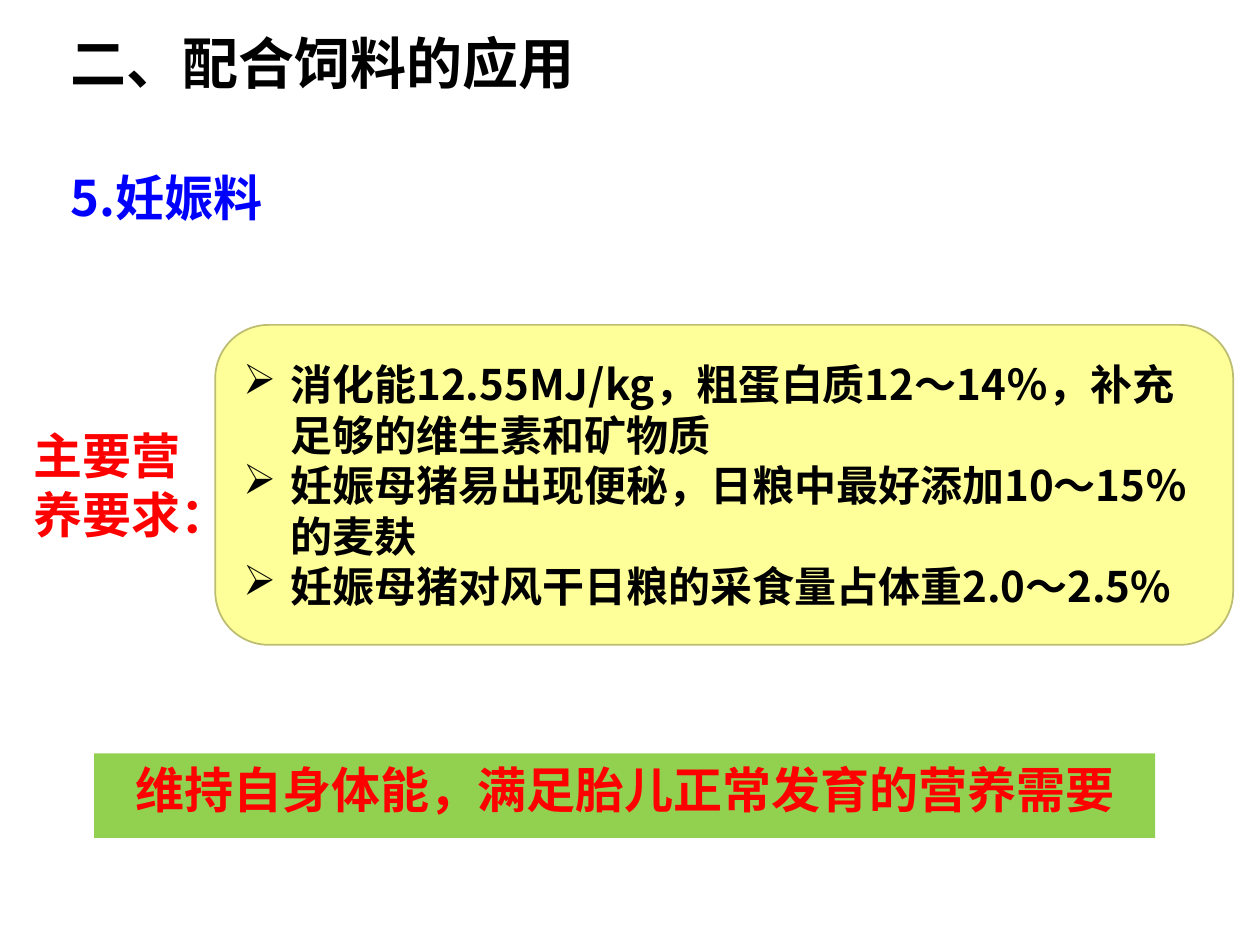
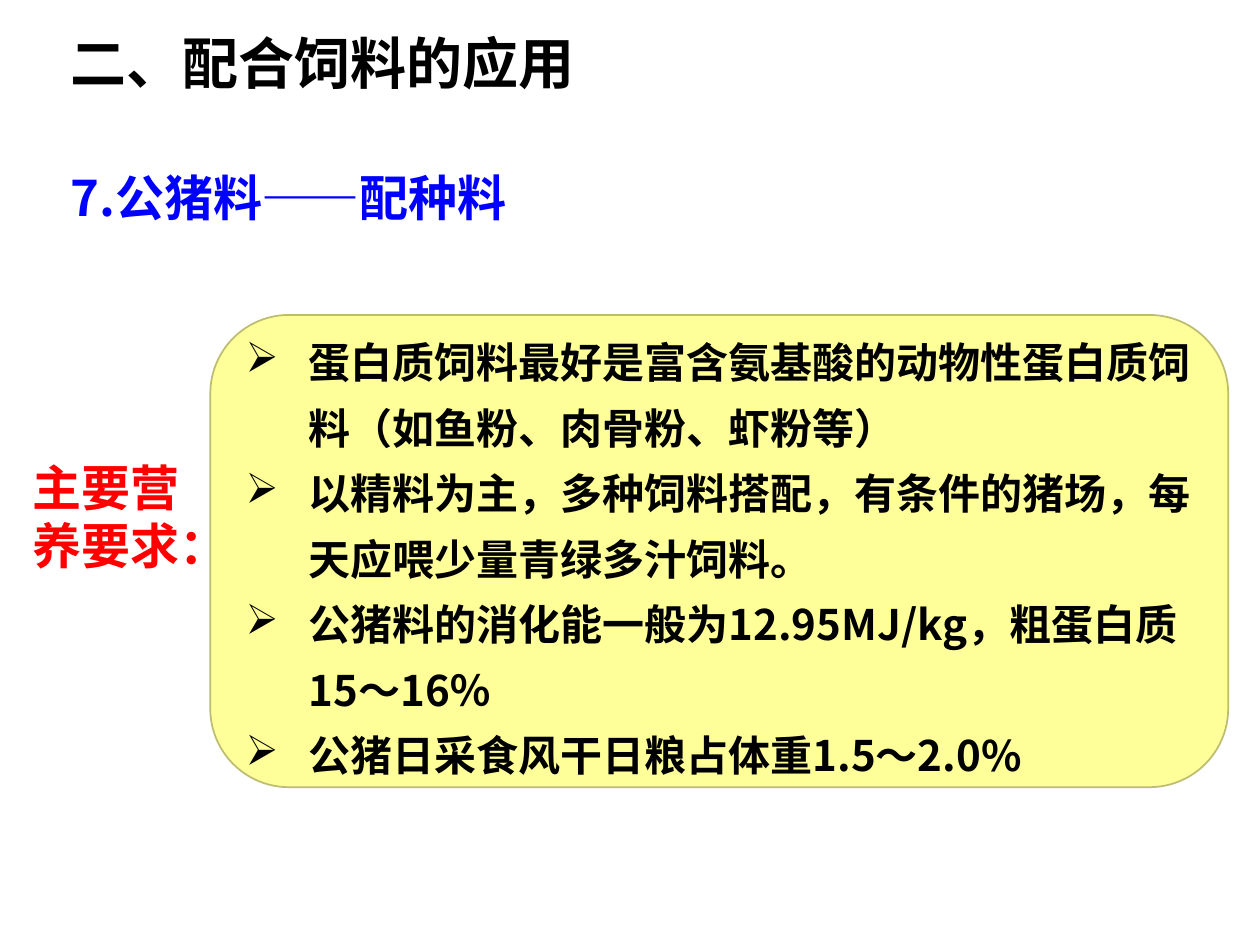
from dataclasses import dataclass
from typing import Optional

from lxml.etree import SubElement
from pptx import Presentation
from pptx.dml.color import RGBColor
from pptx.enum.shapes import MSO_SHAPE as Preset
from pptx.enum.text import MSO_ANCHOR as Anchor, MSO_AUTO_SIZE as AutoSize, PP_ALIGN as Align
from pptx.oxml.ns import qn
from pptx.slide import Slide
from pptx.util import Cm, Pt

FONT = "Noto Sans CJK SC"
BLACK, WHITE, BLUE, RED = "000000", "FFFFFF", "0000FF", "FF0000"
YELLOW, OLIVE, GREEN = "FFFF99", "BDBD71", "92D050"
MARGIN = 1.17
HEADING = "二、配合饲料的应用"
LABEL = ["主要营", "养要求："]


@dataclass(frozen=True)
class Area:
    """A rectangle in centimetres."""
    left: float
    top: float
    width: float
    height: float

    def lengths(self) -> list[Cm]:
        return [Cm(side) for side in (self.left, self.top, self.width, self.height)]


@dataclass(frozen=True)
class Style:
    """How the paragraphs of a box look."""
    size: int
    color: str
    align: Align = Align.LEFT
    anchor: Anchor = Anchor.TOP
    wrap: bool = True
    grow: bool = False
    bullet_indent: float = 0
    line_spacing: Optional[float] = None


@dataclass(frozen=True)
class FeedPage:
    """What differs from one feed page to the next."""
    title: str
    title_width: float
    label: Area
    panel: Area
    indent: float
    points: list[str]
    line_spacing: Optional[float] = None
    summary: str = ""


PAGES = [
    FeedPage(
        title="5.妊娠料",
        title_width=7.37,
        label=Area(0.43, 8.46, 3.81, 2.64),
        panel=Area(4.34, 6.55, 20.52, 6.45),
        indent=0.95,
        points=[
            "消化能12.55MJ/kg，粗蛋白质12～14％，补充足够的维生素和矿物质",
            "妊娠母猪易出现便秘，日粮中最好添加10～15％的麦麸",
            "妊娠母猪对风干日粮的采食量占体重2.0～2.5%",
        ],
        summary="维持自身体能，满足胎儿正常发育的营养需要",
    ),
    FeedPage(
        title="7.公猪料——配种料",
        title_width=10.49,
        label=Area(0.41, 9.09, 3.81, 2.64),
        panel=Area(4.24, 6.35, 20.52, 9.52),
        indent=1.27,
        points=[
            "蛋白质饲料最好是富含氨基酸的动物性蛋白质饲料（如鱼粉、肉骨粉、虾粉等）",
            "以精料为主，多种饲料搭配，有条件的猪场，每天应喂少量青绿多汁饲料。",
            "公猪料的消化能一般为12.95MJ/kg，粗蛋白质15～16％",
            "公猪日采食风干日粮占体重1.5～2.0%",
        ],
        line_spacing=1.3,
    ),
]


def rgb(color: str) -> RGBColor:
    """Turn a hex string into a colour."""
    return RGBColor.from_string(color)


def write(box, lines: list[str], style: Style) -> None:
    """Fill a box with one paragraph per line."""
    frame = box.text_frame
    frame.word_wrap = style.wrap
    frame.vertical_anchor = style.anchor
    frame.auto_size = AutoSize.SHAPE_TO_FIT_TEXT if style.grow else AutoSize.NONE
    for index, line in enumerate(lines):
        para = frame.add_paragraph() if index else frame.paragraphs[0]
        para.text = line
        para.alignment = style.align
        if style.line_spacing:
            para.line_spacing = style.line_spacing
        if style.bullet_indent:
            properties = para._p.get_or_add_pPr()
            indent = Cm(style.bullet_indent)
            properties.set("marL", str(indent))
            properties.set("indent", str(-indent))
            SubElement(properties, qn("a:buChar"), char="➢")
        font = para.font
        font.size, font.bold, font.name = Pt(style.size), True, FONT
        font.color.rgb = rgb(style.color)
        SubElement(font._element, qn("a:ea"), typeface=FONT)


def add_text(page: Slide, area: Area, lines: list[str], style: Style) -> None:
    """Add a plain text box."""
    write(page.shapes.add_textbox(*area.lengths()), lines, style)


def add_block(page: Slide, area: Area, lines: list[str], style: Style, fill: str,
              preset: Preset = Preset.RECTANGLE, line: str = "") -> None:
    """Add a filled shape with text."""
    box = page.shapes.add_shape(preset, *area.lengths())
    box.shadow.inherit = False
    box.fill.solid()
    box.fill.fore_color.rgb = rgb(fill)
    if line:
        box.line.color.rgb = rgb(line)
        box.line.width = Pt(1)
    else:
        box.line.fill.background()
    write(box, lines, style)


def add_feed_page(deck, feed: FeedPage) -> None:
    """Add one feed page to the deck."""
    page = deck.slides.add_slide(deck.slide_layouts[6])
    add_text(page, Area(MARGIN, 3.28, feed.title_width, 1.4), [feed.title],
             Style(28, BLUE, anchor=Anchor.MIDDLE))
    add_block(page, Area(MARGIN, 0.46, 10.82, 1.63), [HEADING],
              Style(32, BLACK, wrap=False, grow=True), WHITE)
    add_text(page, feed.label, LABEL, Style(28, RED, grow=True))
    points_style = Style(24, BLACK, anchor=Anchor.MIDDLE, bullet_indent=feed.indent,
                         line_spacing=feed.line_spacing)
    add_block(page, feed.panel, feed.points, points_style, YELLOW,
              Preset.FLOWCHART_ALTERNATE_PROCESS, OLIVE)
    if feed.summary:
        add_block(page, Area(1.9, 15.19, 21.39, 1.7), [feed.summary],
                  Style(28, RED, align=Align.CENTER), GREEN)


def main() -> None:
    """Build and save the deck."""
    deck = Presentation()
    deck.slide_width, deck.slide_height = Cm(25.4), Cm(19.05)
    for feed in PAGES:
        add_feed_page(deck, feed)
    deck.save("out.pptx")


if __name__ == "__main__":
    main()
